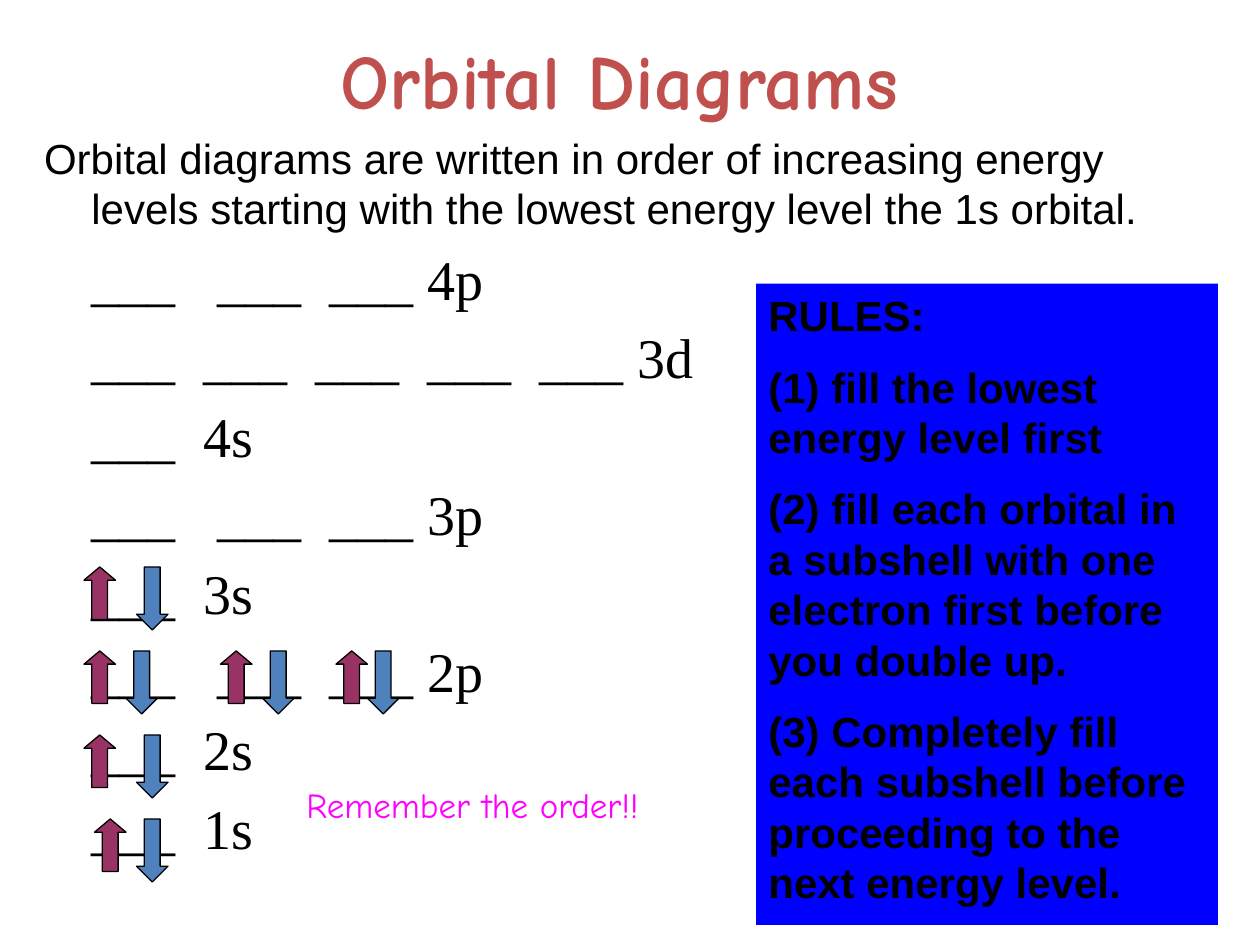
from pptx import Presentation
from pptx.dml.color import RGBColor
from pptx.enum.shapes import MSO_SHAPE
from pptx.enum.text import MSO_ANCHOR, MSO_AUTO_SIZE, PP_ALIGN
from pptx.oxml.ns import qn
from pptx.util import Pt

UP, DOWN, RECTANGLE = MSO_SHAPE.UP_ARROW, MSO_SHAPE.DOWN_ARROW, MSO_SHAPE.RECTANGLE
MIDDLE, TOP = MSO_ANCHOR.MIDDLE, MSO_ANCHOR.TOP
NO_FIT, GROW = MSO_AUTO_SIZE.NONE, MSO_AUTO_SIZE.SHAPE_TO_FIT_TEXT
LEFT, CENTER = PP_ALIGN.LEFT, PP_ALIGN.CENTER

BLACK = RGBColor(0x00, 0x00, 0x00)
RED = RGBColor(0xC0, 0x50, 0x4D)
BLUE = RGBColor(0x00, 0x00, 0xFF)
PLUM = RGBColor(0x99, 0x33, 0x66)
STEEL = RGBColor(0x4F, 0x81, 0xBD)
MAGENTA = RGBColor(0xFF, 0x00, 0xFF)

SANS, SERIF, HAND = "Arial", "Times New Roman", "Comic Neue"

INTRO = ("Orbital diagrams are written in order of increasing energy levels "
         "starting with the lowest energy level the 1s orbital.")
SUBSHELLS = [
    "___   ___  ___ 4p",
    "___  ___  ___  ___  ___ 3d",
    "___  4s",
    "___   ___  ___ 3p",
    "___  3s",
    "___   ___  ___ 2p",
    "___  2s",
    "___  1s",
]
RULES = [
    "RULES:",
    "(1) fill the lowest energy level first",
    "(2) fill each orbital in a subshell with one electron first before you double up.",
    "(3) Completely fill each subshell before proceeding to the next energy level.",
]
ELECTRON_ROWS = [
    [(0, 30)],
    [(0, 24), (78, 102), (144, 162)],
    [(0, 30)],
    [(6, 30)],
]


def place(shape, box):
    """Move and size a shape to a box of left, top, width and height in points."""
    shape.left, shape.top, shape.width, shape.height = map(Pt, box)


def prepare(frame, anchor, fit):
    """Set wrapping, anchor and fitting of a text frame."""
    frame.word_wrap = True
    frame.vertical_anchor = anchor
    frame.auto_size = fit


def write(frame, text, font, size, color, bold=False, align=LEFT, space=0):
    """Add a one-run paragraph, using the first paragraph while it is empty."""
    para = frame.paragraphs[0]
    if para.runs:
        para = frame.add_paragraph()
    para.alignment = align
    para.space_before = Pt(space)
    span = para.add_run()
    span.text = text
    span.font.name = font
    span.font.size = Pt(size)
    span.font.bold = bold
    span.font.color.rgb = color
    return para


def add_heading(page, box):
    """Fill the title placeholder."""
    title = page.shapes.title
    place(title, box)
    prepare(title.text_frame, MIDDLE, NO_FIT)
    write(title.text_frame, "Orbital Diagrams", HAND, 44, RED, bold=True, align=CENTER)


def add_subshells(page, box):
    """Fill the body placeholder with the introduction and the subshell lines."""
    body = page.placeholders[1]
    place(body, box)
    frame = body.text_frame
    prepare(frame, TOP, NO_FIT)
    lines = [(INTRO, SANS, 24)]
    lines += [("\t" + subshell, SERIF, 32) for subshell in SUBSHELLS]
    for text, font, size in lines:
        para = write(frame, text, font, size, BLACK, space=size * 0.2)
        properties = para._p.get_or_add_pPr()
        properties.set("marL", str(Pt(27)))
        properties.set("indent", str(-Pt(27)))
        properties.append(properties.makeelement(qn("a:buNone"), {}))


def add_rules(page, box):
    """Add the blue panel of filling rules."""
    panel = page.shapes.add_shape(RECTANGLE, *map(Pt, box))
    panel.shadow.inherit = False
    panel.fill.solid()
    panel.fill.fore_color.rgb = BLUE
    panel.line.fill.background()
    prepare(panel.text_frame, TOP, GROW)
    for rule in RULES:
        write(panel.text_frame, rule, SANS, 24, BLACK, bold=True, space=12)


def add_arrow(page, kind, box, head, color):
    """Add one electron arrow."""
    arrow = page.shapes.add_shape(kind, *map(Pt, box))
    arrow.shadow.inherit = False
    arrow.adjustments[0] = 0.5
    arrow.adjustments[1] = head
    arrow.fill.solid()
    arrow.fill.fore_color.rgb = color
    arrow.line.color.rgb = BLACK
    arrow.line.width = Pt(0.75)


def add_electrons(page, box):
    """Add pairs of opposite electron arrows in equally spaced rows."""
    left, top, _, height = box
    pitch = height / len(ELECTRON_ROWS)
    for row, pairs in enumerate(ELECTRON_ROWS):
        y = top + row * pitch
        for up, down in pairs:
            add_arrow(page, UP, (left + up, y, 18, 30), 0.42, PLUM)
            add_arrow(page, DOWN, (left + down, y, 18, 36), 0.5, STEEL)


def add_reminder(page, box):
    """Add the reminder beside the lowest subshells."""
    reminder = page.shapes.add_textbox(*map(Pt, box))
    prepare(reminder.text_frame, TOP, GROW)
    write(reminder.text_frame, "Remember the order!!", HAND, 20, MAGENTA, space=10)


def main():
    """Build and save the slide."""
    deck = Presentation()
    deck.slide_width, deck.slide_height = Pt(720), Pt(540)
    page = deck.slides.add_slide(deck.slide_layouts[1])
    add_heading(page, (48, 0, 612, 90))
    add_subshells(page, (18, 72, 678, 468))
    add_rules(page, (432, 162, 264, 366.5))
    add_electrons(page, (48, 324, 180, 192))
    add_reminder(page, (168, 444, 240, 31))
    deck.save("out.pptx")


if __name__ == "__main__":
    main()
